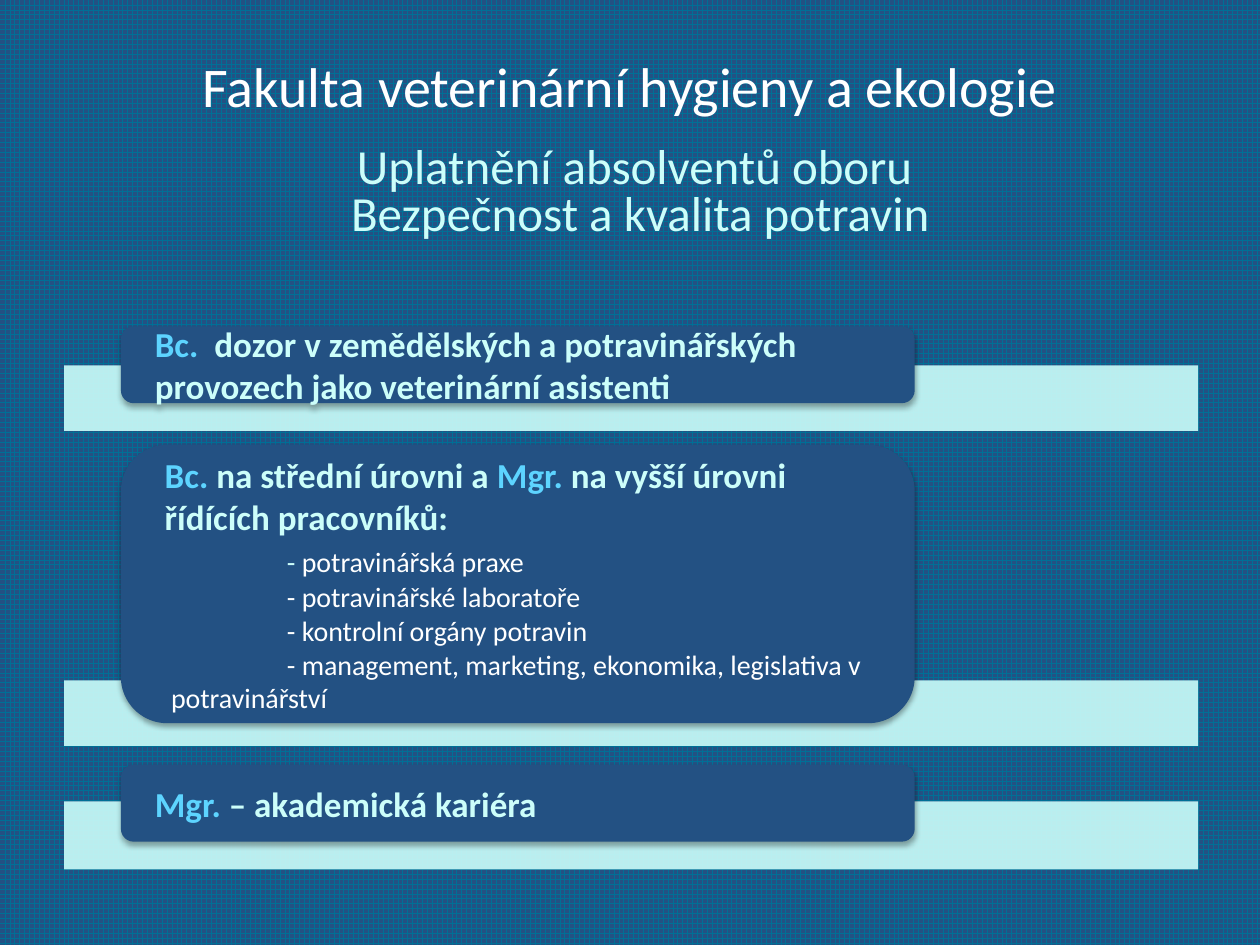
from lxml import etree
from pptx import Presentation
from pptx.dml.color import RGBColor
from pptx.enum.dml import MSO_PATTERN
from pptx.enum.shapes import MSO_SHAPE
from pptx.enum.text import MSO_ANCHOR, PP_ALIGN
from pptx.oxml.ns import qn
from pptx.util import Inches, Pt

RECT, ROUND = MSO_SHAPE.RECTANGLE, MSO_SHAPE.ROUNDED_RECTANGLE
LEFT, CENTER = PP_ALIGN.LEFT, PP_ALIGN.CENTER
TOP, MIDDLE = MSO_ANCHOR.TOP, MSO_ANCHOR.MIDDLE
GRID = MSO_PATTERN.LARGE_GRID

COLS, ROWS = 100, 75
WIDTH, HEIGHT = Inches(10), Inches(7.5)
NAVY, TEAL, MINT, SKY, WHITE = "235183", "006F96", "CCFEFA", "5DD4FF", "FFFFFF"

HEAD = {"size": Pt(20), "bold": True}
ITEM = {"size": Pt(16), "bold": False}
ITEM_INDENT = {"marL": Inches(0.05), "indent": Inches(0.92)}

SUPERVISION = [
    ([("Bc. ", SKY), (" dozor v zemědělských a potravinářských", MINT)], HEAD, {}),
    ([("provozech jako veterinární asistenti", MINT)], HEAD, {}),
]
MANAGEMENT = [
    ([("Bc. ", SKY), ("na střední úrovni a ", MINT), ("Mgr. ", SKY),
      ("na vyšší úrovni řídících pracovníků:", MINT)], HEAD, {}),
    ([("- ", MINT), ("potravinářská praxe", WHITE)], ITEM, {"space_before": Pt(4)}),
    ([("- potravinářské laboratoře", WHITE)], ITEM, {"space_before": Pt(1)}),
    ([("- kontrolní orgány potravin", WHITE)], ITEM, {}),
    ([("- management, marketing, ekonomika, legislativa v potravinářství", WHITE)], ITEM, {}),
]
ACADEMIC = [([("Mgr. ", SKY), ("– akademická kariéra", MINT)], HEAD, {})]

SECTIONS = [
    {"card": (25.9, 6.1), "bar": (29, 5.2), "paragraphs": SUPERVISION},
    {"card": (35.3, 22.1), "bar": (54, 5.2), "paragraphs": MANAGEMENT},
    {"card": (60.7, 6.1), "bar": (63.6, 5.4), "paragraphs": ACADEMIC},
]


def rgb(value):
    """Turn a hex string into a colour."""
    return RGBColor.from_string(value)


def cell(left, top, width, height):
    """Turn grid columns and rows into slide lengths."""
    col, row = WIDTH / COLS, HEIGHT / ROWS
    return [int(n * unit) for n, unit in zip((left, top, width, height), (col, row, col, row))]


def apply(target, formats):
    """Set every attribute named in a dict of format values."""
    for name, value in formats.items():
        setattr(target, name, value)


def add_runs(p, text, color, font):
    """Add coloured text to a paragraph, with a line break at each newline."""
    for i, line in enumerate(text.split("\n")):
        if i:
            p.add_line_break()
        r = p.add_run()
        r.text = line
        apply(r.font, {"name": "Calibri", **font})
        r.font.color.rgb = rgb(color)


def write(tf, paragraphs, frame, align):
    """Fill a text frame with paragraphs of coloured runs."""
    apply(tf, {"word_wrap": True, **frame})
    for i, (runs, font, spacing) in enumerate(paragraphs):
        p = tf.paragraphs[0] if i == 0 else tf.add_paragraph()
        apply(p, {"alignment": align, **spacing})
        if font is ITEM:
            for name, value in ITEM_INDENT.items():
                p._p.get_or_add_pPr().set(name, str(int(value)))
        for text, color in runs:
            add_runs(p, text, color, font)


def add_heading(s, box, text, size, color, anchor, spacing):
    """Add a centred heading."""
    tf = s.shapes.add_textbox(*cell(*box)).text_frame
    paragraphs = [([(text, color)], {"size": Pt(size)}, spacing)]
    write(tf, paragraphs, {"vertical_anchor": anchor}, CENTER)


def add_block(s, kind, box, color):
    """Add a filled shape without line or shadow."""
    sp = s.shapes.add_shape(kind, *cell(*box))
    sp.shadow.inherit = False
    sp.fill.solid()
    sp.fill.fore_color.rgb = rgb(color)
    sp.line.fill.background()
    return sp


def add_alpha(color_element, percent):
    """Make a colour element partly transparent."""
    etree.SubElement(color_element, qn("a:alpha")).set("val", str(percent * 1000))


def add_bar(s, top, height):
    """Add a pale translucent bar across the slide."""
    sp = add_block(s, RECT, (5.1, top, 90, height), MINT)
    add_alpha(sp._element.spPr.find(".//" + qn("a:srgbClr")), 90)


def add_card(s, top, height, paragraphs):
    """Add a rounded card with a soft shadow and its text."""
    sp = add_block(s, ROUND, (9.6, top, 63, height), NAVY)
    effects = sp._element.spPr.find(qn("a:effectLst"))
    shadow = etree.SubElement(effects, qn("a:outerShdw"), blurRad=str(Pt(3.1)),
                              dist=str(Pt(1.8)), dir="5400000", rotWithShape="0")
    color = etree.SubElement(shadow, qn("a:srgbClr"), val="000000")
    add_alpha(color, 35)
    side = Inches(0.24)
    frame = {"vertical_anchor": MIDDLE, "margin_left": side, "margin_right": side,
             "margin_top": 0, "margin_bottom": 0}
    write(sp.text_frame, paragraphs, frame, LEFT)


def main():
    """Build the slide and save it."""
    prs = Presentation()
    apply(prs, {"slide_width": WIDTH, "slide_height": HEIGHT})
    s = prs.slides.add_slide(prs.slide_layouts[6])
    fill = s.background.fill
    fill.patterned()
    fill.pattern = GRID
    fill.fore_color.rgb, fill.back_color.rgb = rgb(TEAL), rgb(NAVY)

    add_heading(s, (7.5, 3.6, 85, 10.1), "Fakulta veterinární hygieny a ekologie",
                32, WHITE, TOP, {})
    add_heading(s, (5.9, 10.7, 89.8, 9.4),
                "Uplatnění absolventů oboru \nBezpečnost a kvalita potravin",
                28, MINT, MIDDLE, {"line_spacing": 0.8, "space_before": Pt(7.5)})
    for section in SECTIONS:
        add_bar(s, *section["bar"])
        add_card(s, *section["card"], section["paragraphs"])
    prs.save("out.pptx")


if __name__ == "__main__":
    main()
